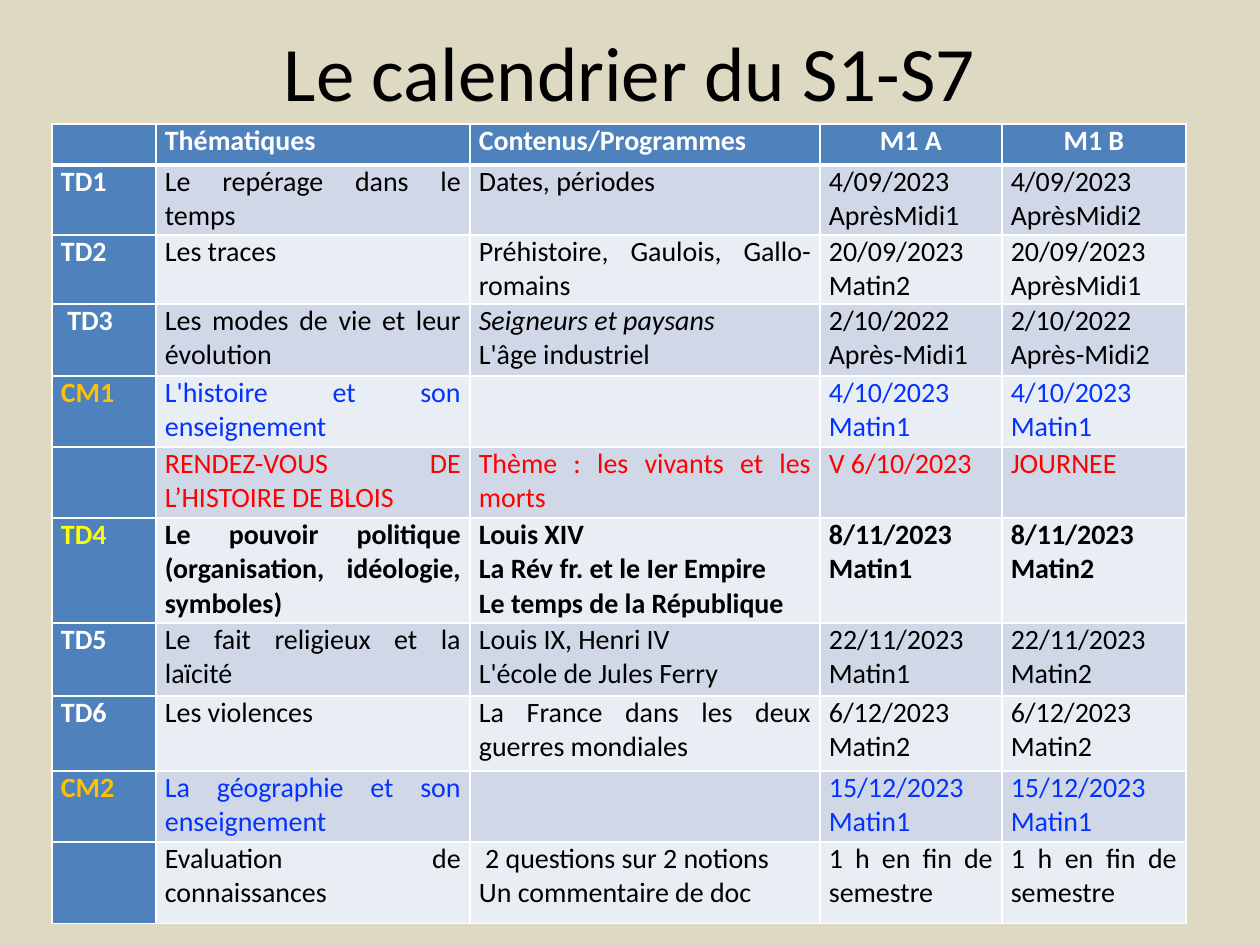
from lxml import etree
from pptx import Presentation
from pptx.dml.color import RGBColor
from pptx.enum.text import MSO_ANCHOR, PP_ALIGN
from pptx.oxml.ns import qn
from pptx.util import Pt

LEFT, CENTER, JUSTIFY = PP_ALIGN.LEFT, PP_ALIGN.CENTER, PP_ALIGN.JUSTIFY
MIDDLE = MSO_ANCHOR.MIDDLE
PX = 914400 // 126  # EMU per px
FONT = "Calibri"

COLORS = {
    "background": "DDD9C3", "header": "4F81BD",
    "band_dark": "D0D8E8", "band_light": "E9EDF4",
    "white": "FFFFFF", "black": "000000", "blue": "0432FF",
    "red": "FF0000", "orange": "FFC000", "yellow": "FFFF00",
}

# Content
TITLE = "Le calendrier du S1-S7"
HEADINGS = ["", "Thématiques", "Contenus/Programmes", "M1 A", "M1 B"]
# Each session: height in px, cells, then any special text colours or weight
SESSIONS = [
    (70, ["TD1", "Le repérage dans le temps", "Dates, périodes",
          "4/09/2023\nAprèsMidi1", "4/09/2023\nAprèsMidi2"], {}),
    (69, ["TD2", "Les traces", "Préhistoire, Gaulois, Gallo-romains",
          "20/09/2023\nMatin2", "20/09/2023\nAprèsMidi1"], {}),
    (72, [" TD3", "Les modes de vie et leur évolution",
          "Seigneurs et paysans\nL'âge industriel",
          "2/10/2022\nAprès-Midi1", "2/10/2022\nAprès-Midi2"], {}),
    (71, ["CM1", "L'histoire et son enseignement", "",
          "4/10/2023\nMatin1", "4/10/2023\nMatin1"],
     {"label": "orange", "body": "blue"}),
    (71, ["", "RENDEZ-VOUS DE L’HISTOIRE DE BLOIS",
          "Thème : les vivants et les morts", "V 6/10/2023", "JOURNEE"],
     {"body": "red"}),
    (105, ["TD4", "Le pouvoir politique (organisation, idéologie, symboles)",
           "Louis XIV\nLa Rév fr. et le Ier Empire\nLe temps de la République",
           "8/11/2023\nMatin1", "8/11/2023\nMatin2"],
     {"label": "yellow", "bold": True}),
    (73, ["TD5", "Le fait religieux et la laïcité",
          "Louis IX, Henri IV\nL'école de Jules Ferry",
          "22/11/2023\nMatin1", "22/11/2023\nMatin2"], {}),
    (75, ["TD6", "Les violences", "La France dans les deux guerres mondiales",
          "6/12/2023\nMatin2", "6/12/2023\nMatin2"], {}),
    (71, ["CM2", "La géographie et son enseignement", "",
          "15/12/2023\nMatin1", "15/12/2023\nMatin1"],
     {"label": "orange", "body": "blue"}),
    (82, ["", "Evaluation de connaissances",
          " 2 questions sur 2 notions\nUn commentaire de doc",
          "1 h en fin de semestre", "1 h en fin de semestre"], {}),
]
ITALIC_LINES = {"Seigneurs et paysans"}

# Layout in px
HEADER_HEIGHT = 41
COLUMN_WIDTHS = [104, 314, 350, 182, 184]
CALENDAR_LEFT, CALENDAR_TOP = 52, 124
CELL_INSET = 9


def rgb(name):
    return RGBColor.from_string(COLORS[name])


def write(frame, text, size=16, color="black", bold=False, align=JUSTIFY):
    for i, line in enumerate(text.split("\n")):
        paragraph = frame.paragraphs[0] if i == 0 else frame.add_paragraph()
        paragraph.alignment = align
        if not line:
            continue
        run = paragraph.add_run()
        run.text = line
        run.font.name = FONT
        run.font.size = Pt(size)
        run.font.bold = bold
        run.font.italic = line in ITALIC_LINES
        run.font.color.rgb = rgb(color)


def style_cell(cell, fill, bottom_width=1):
    cell.margin_left = cell.margin_right = CELL_INSET * PX
    cell.margin_top = cell.margin_bottom = 0
    cell.fill.solid()
    cell.fill.fore_color.rgb = rgb(fill)
    # Borders come before the fill in the cell properties
    properties = cell._tc.get_or_add_tcPr()
    for i, side in enumerate(("lnL", "lnR", "lnT", "lnB")):
        width = bottom_width if side == "lnB" else 1
        line = etree.Element(qn("a:" + side), w=str(Pt(width)))
        solid = etree.SubElement(line, qn("a:solidFill"))
        etree.SubElement(solid, qn("a:srgbClr"), val=COLORS["white"])
        properties.insert(i, line)


def main():
    prs = Presentation()
    prs.slide_width, prs.slide_height = 1260 * PX, 945 * PX
    slide = prs.slides.add_slide(prs.slide_layouts[5])
    slide.background.fill.solid()
    slide.background.fill.fore_color.rgb = rgb("background")

    # Title
    title = slide.shapes.title
    title.left, title.top = 63 * PX, 0
    title.width, title.height = 1134 * PX, 141 * PX
    title.text_frame.vertical_anchor = MIDDLE
    write(title.text_frame, TITLE, size=44, align=CENTER)

    # Calendar grid
    heights = [HEADER_HEIGHT] + [height for height, _, _ in SESSIONS]
    calendar = slide.shapes.add_table(
        len(heights), len(COLUMN_WIDTHS), CALENDAR_LEFT * PX, CALENDAR_TOP * PX,
        sum(COLUMN_WIDTHS) * PX, sum(heights) * PX).table
    for column, width in zip(calendar.columns, COLUMN_WIDTHS):
        column.width = width * PX
    for row, height in zip(calendar.rows, heights):
        row.height = height * PX

    # Header row
    for c, heading in enumerate(HEADINGS):
        cell = calendar.cell(0, c)
        style_cell(cell, "header", bottom_width=3)
        write(cell.text_frame, heading, color="white", bold=True,
              align=CENTER if c > 2 else JUSTIFY)

    # Session rows
    for r, (_, texts, special) in enumerate(SESSIONS, start=1):
        band = "band_dark" if r % 2 else "band_light"
        for c, text in enumerate(texts):
            cell = calendar.cell(r, c)
            if c == 0:
                style_cell(cell, "header")
                write(cell.text_frame, text, bold=True, align=LEFT,
                      color=special.get("label", "white"))
            else:
                style_cell(cell, band)
                write(cell.text_frame, text, bold=special.get("bold", False),
                      color=special.get("body", "black"))

    prs.save("out.pptx")


if __name__ == "__main__":
    main()
